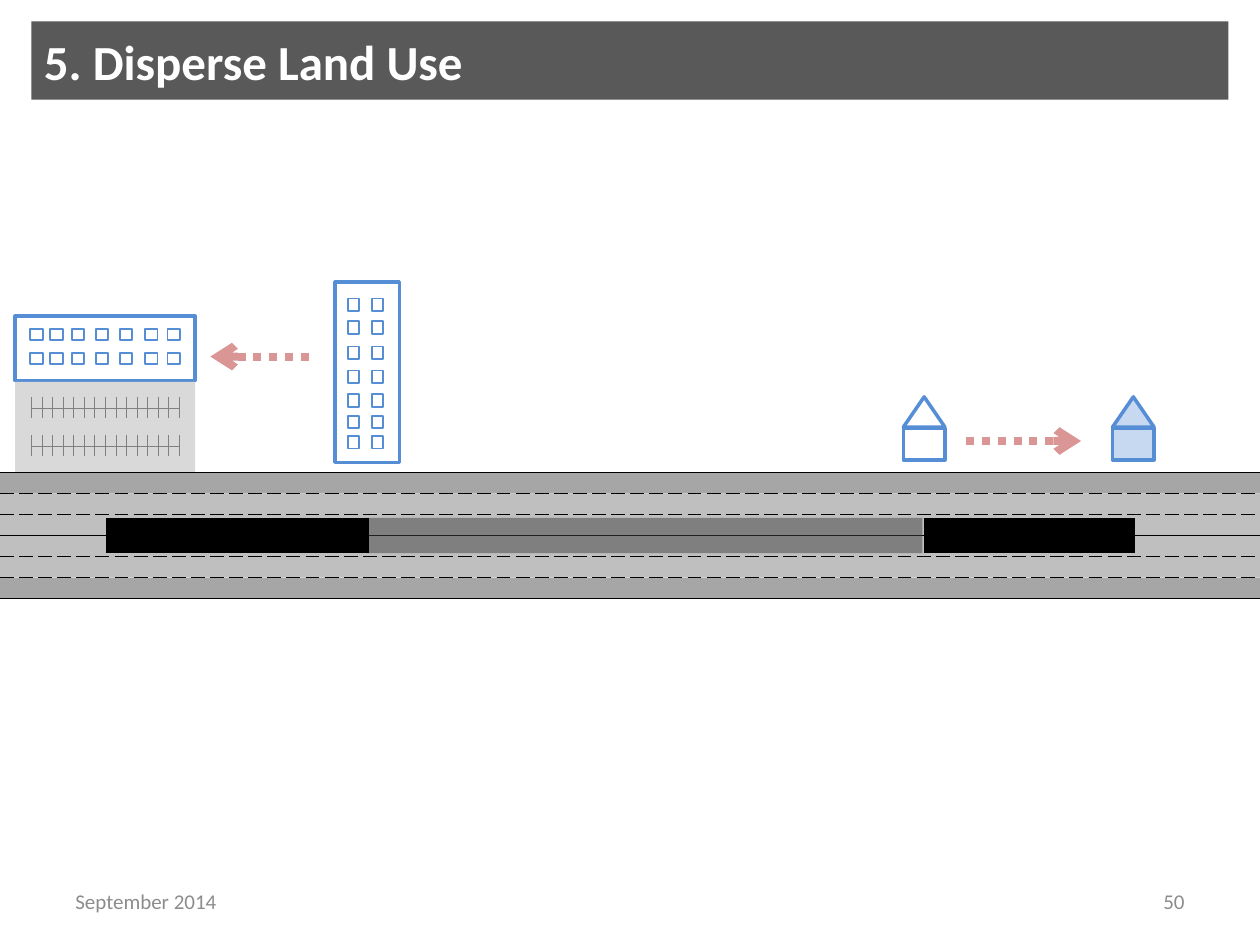
from lxml import etree
from pptx import Presentation
from pptx.dml.color import RGBColor
from pptx.enum.dml import MSO_LINE
from pptx.enum.shapes import MSO_CONNECTOR, MSO_SHAPE
from pptx.enum.text import MSO_ANCHOR, PP_ALIGN
from pptx.oxml.ns import qn
from pptx.util import Inches, Pt

RECTANGLE = MSO_SHAPE.RECTANGLE
TRIANGLE = MSO_SHAPE.ISOSCELES_TRIANGLE
STRAIGHT = MSO_CONNECTOR.STRAIGHT
LONG_DASH = MSO_LINE.LONG_DASH
DOTTED = MSO_LINE.ROUND_DOT
LEFT = PP_ALIGN.LEFT
RIGHT = PP_ALIGN.RIGHT
MIDDLE = MSO_ANCHOR.MIDDLE

COLORS = {
    "title bar": "595959",
    "white": "FFFFFF",
    "footer": "8C8C8C",
    "building": "558ED5",
    "house": "C6D9F1",
    "parking": "D9D9D9",
    "stall": "808080",
    "move": "D99694",
    "outer lane": "A6A6A6",
    "inner lane": "BFBFBF",
    "trip": "404040",
    "black": "000000",
}


def add_box(shapes, left, top, width, height, kind=RECTANGLE, fill=None, line=None,
            weight=1, text=None, size=12, color="white", bold=False, align=LEFT):
    """Add a preset shape, or a text box when kind is None, with optional text."""
    place = [Inches(value) for value in (left, top, width, height)]
    if kind is None:
        shape = shapes.add_textbox(*place)
    else:
        shape = shapes.add_shape(kind, *place)
        shape.shadow.inherit = False
        if fill:
            shape.fill.solid()
            shape.fill.fore_color.rgb = RGBColor.from_string(COLORS[fill])
        else:
            shape.fill.background()
        if line:
            shape.line.color.rgb = RGBColor.from_string(COLORS[line])
            shape.line.width = Pt(weight)
        else:
            shape.line.fill.background()
    if text:
        frame = shape.text_frame
        frame.word_wrap = True
        frame.vertical_anchor = MIDDLE
        paragraph = frame.paragraphs[0]
        paragraph.alignment = align
        run = paragraph.add_run()
        run.text = text
        run.font.name = "Calibri"
        run.font.size = Pt(size)
        run.font.bold = bold
        run.font.color.rgb = RGBColor.from_string(COLORS[color])


def add_line(shapes, x1, y1, x2, y2, color="black", weight=1, dash=None,
             arrow=False, opacity=None):
    connector = shapes.add_connector(
        STRAIGHT, Inches(x1), Inches(y1), Inches(x2), Inches(y2))
    connector.line.color.rgb = RGBColor.from_string(COLORS[color])
    connector.line.width = Pt(weight)
    if dash is not None:
        connector.line.dash_style = dash
    properties = connector._element.spPr
    outline = properties.find(qn("a:ln"))
    if opacity is not None:
        rgb = outline.find(qn("a:solidFill")).find(qn("a:srgbClr"))
        etree.SubElement(rgb, qn("a:alpha")).set("val", str(opacity * 1000))
    if arrow:
        etree.SubElement(outline, qn("a:tailEnd")).set("type", "arrow")
    etree.SubElement(properties, qn("a:effectLst"))


presentation = Presentation()
presentation.slide_width = Inches(10)
presentation.slide_height = Inches(7.5)
slide = presentation.slides.add_slide(presentation.slide_layouts[6])
shapes = slide.shapes

# Office tower
tower = shapes.add_group_shape().shapes
add_box(tower, 2.66, 2.24, 0.51, 1.43, line="building", weight=2)
for top in (2.37, 2.55, 2.75, 2.94, 3.13, 3.3, 3.46):
    for left in (2.76, 2.95):
        add_box(tower, left, top, 0.09, 0.1, line="building")

# Low building with its parking lot
low_building = shapes.add_group_shape().shapes
add_box(low_building, 0.12, 2.51, 1.43, 0.51, line="building", weight=2)
for left in (0.24, 0.4, 0.57, 0.76, 0.95, 1.15, 1.33):
    for top in (2.61, 2.8):
        add_box(low_building, left, top, 0.1, 0.09, line="building")

add_box(shapes, 0.12, 3.03, 1.43, 0.72, fill="parking")
stalls = shapes.add_group_shape().shapes
STALL_LEFT, STALL_RIGHT, STALL_COUNT = 0.25, 1.42, 14
stall_width = (STALL_RIGHT - STALL_LEFT) / STALL_COUNT
for middle in (3.24, 3.54):
    add_line(stalls, STALL_LEFT, middle, STALL_RIGHT, middle, "stall", 0.25)
    for index in range(STALL_COUNT + 1):
        x = STALL_LEFT + index * stall_width
        add_line(stalls, x, middle - 0.09, x, middle + 0.08, "stall", 0.25)

# Houses
for left, fill in ((7.17, None), (8.83, "house")):
    house = shapes.add_group_shape().shapes
    add_box(house, left, 3.4, 0.33, 0.25, fill=fill, line="building", weight=2)
    add_box(house, left, 3.15, 0.33, 0.24, TRIANGLE, fill, "building", 2)

# Moves away from each other
for start, end, y in ((7.67, 8.58, 3.5), (2.45, 1.67, 2.83)):
    add_line(shapes, start, y, end, y, "move", 4.5, DOTTED, arrow=True)

# Road: six lanes, solid at the edges and centre
ROAD_TOP, LANE = 3.75, 1 / 6
for first, lanes, fill in ((5, 1, "outer lane"), (0, 1, "outer lane"), (1, 4, "inner lane")):
    add_box(shapes, 0, ROAD_TOP + first * LANE, 10, lanes * LANE, fill=fill)
for index in range(7):
    y = ROAD_TOP + index * LANE
    add_line(shapes, 0, y, 10, y, dash=None if index % 3 == 0 else LONG_DASH)

# Trip length along the road, before and after
for start, end, color, opacity in (
    (7.33, 9.01, "black", None),
    (2.91, 7.32, "trip", 50),
    (0.84, 2.93, "black", None),
):
    add_line(shapes, start, 4.25, end, 4.25, color, 20.25, opacity=opacity)

# Title and footer
add_box(shapes, 0.25, 0.17, 9.5, 0.62, fill="title bar",
        text="5. Disperse Land Use", size=28, bold=True)
add_box(shapes, 0.5, 6.95, 2.33, 0.4, None, text="September 2014", color="footer")
add_box(shapes, 7.17, 6.95, 2.33, 0.4, None, text="50", color="footer", align=RIGHT)

presentation.save("out.pptx")
